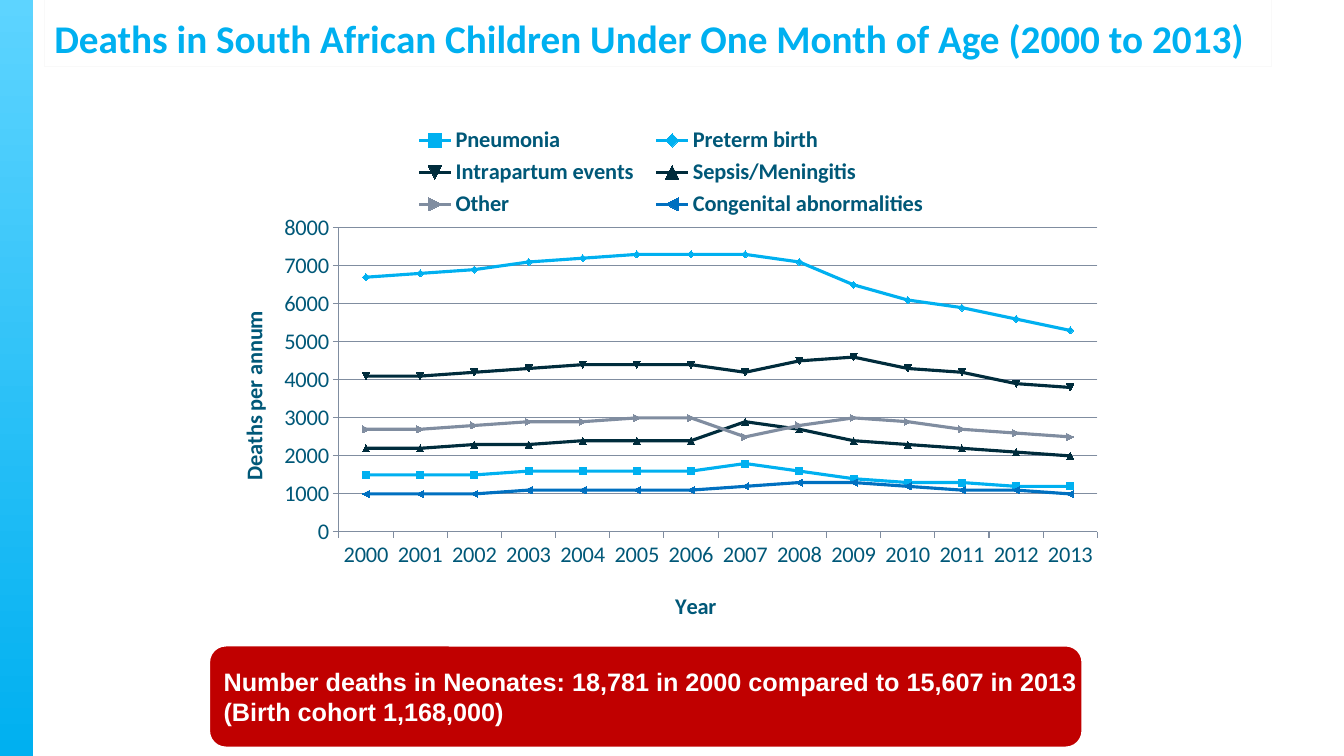
from dataclasses import dataclass

from lxml.etree import SubElement
from pptx import Presentation
from pptx.chart.data import CategoryChartData
from pptx.dml.color import RGBColor
from pptx.enum.chart import XL_CHART_TYPE, XL_LEGEND_POSITION, XL_TICK_MARK
from pptx.enum.shapes import MSO_SHAPE
from pptx.enum.text import MSO_ANCHOR, PP_ALIGN
from pptx.oxml.ns import qn
from pptx.util import Inches, Pt

SKY, TEAL, NAVY, GREY = "00B0F0", "005878", "002C3C", "808DA0"
WHITE, RED, BLUE = "FFFFFF", "C00000", "0070C0"


@dataclass
class Cause:
    name: str
    color: str
    hundreds: list[int]


CAUSES = [
    Cause("Pneumonia", SKY, [15, 15, 15, 16, 16, 16, 16, 18, 16, 14, 13, 13, 12, 12]),
    Cause("Preterm birth", SKY, [67, 68, 69, 71, 72, 73, 73, 73, 71, 65, 61, 59, 56, 53]),
    Cause("Intrapartum events", NAVY, [41, 41, 42, 43, 44, 44, 44, 42, 45, 46, 43, 42, 39, 38]),
    Cause("Sepsis/Meningitis", NAVY, [22, 22, 23, 23, 24, 24, 24, 29, 27, 24, 23, 22, 21, 20]),
    Cause("Other", GREY, [27, 27, 28, 29, 29, 30, 30, 25, 28, 30, 29, 27, 26, 25]),
    Cause("Congenital abnormalities", BLUE, [10, 10, 10, 11, 11, 11, 11, 12, 13, 13, 12, 11, 11, 10]),
]


def rgb(color: str) -> RGBColor:
    return RGBColor.from_string(color)


def set_font(font, size: float, color: str, name: str = "Calibri", bold: bool = False) -> None:
    font.size, font.name, font.bold = Pt(size), name, bold
    font.color.rgb = rgb(color)


def add_box(page, left: float, top: float, width: float, height: float, kind=MSO_SHAPE.RECTANGLE):
    box = page.shapes.add_shape(kind, Inches(left), Inches(top), Inches(width), Inches(height))
    box.shadow.inherit = False
    return box


def paint(box, fill: str, line: str, line_width: float) -> None:
    box.fill.solid()
    box.fill.fore_color.rgb = rgb(fill)
    box.line.color.rgb = rgb(line)
    box.line.width = Pt(line_width)


def write(box, *lines: str, anchor, wrap: bool, **font_format) -> None:
    frame = box.text_frame
    frame.word_wrap = wrap
    frame.vertical_anchor = anchor
    for index, line in enumerate(lines):
        para = frame.paragraphs[0] if index == 0 else frame.add_paragraph()
        para.alignment = PP_ALIGN.LEFT
        span = para.add_run()
        span.text = line
        set_font(span.font, **font_format)


def place(element, **values) -> None:
    """Give a chart part a fixed layout, in fractions of the chart."""
    layout = element.get_or_add_layout() if hasattr(element, "get_or_add_layout") else element.find(qn("c:layout"))
    manual = SubElement(layout, qn("c:manualLayout"))
    for tag, value in values.items():
        SubElement(manual, qn(f"c:{tag}")).set("val", str(value))


def style_axis(axis, title: str, x: float, y: float) -> None:
    axis.major_tick_mark = XL_TICK_MARK.OUTSIDE
    axis.minor_tick_mark = XL_TICK_MARK.NONE
    axis.format.line.color.rgb = rgb(GREY)
    set_font(axis.tick_labels.font, 16, TEAL)
    span = axis.axis_title.text_frame.paragraphs[0].add_run()
    span.text = title
    set_font(span.font, 16, TEAL, bold=True)
    place(axis.axis_title._element, xMode="edge", yMode="edge", x=x, y=y)


def add_deaths_chart(page) -> None:
    data = CategoryChartData()
    data.categories = [str(year) for year in range(2000, 2014)]
    for cause in CAUSES:
        data.add_series(cause.name, [100 * value for value in cause.hundreds])
    chart = page.shapes.add_chart(
        XL_CHART_TYPE.LINE_MARKERS, Inches(2.24), Inches(1.16), Inches(8.83), Inches(5.24), data
    ).chart
    set_font(chart.font, 10, TEAL)
    chart.has_title = False
    plot = chart.plots[0]
    plot.vary_by_categories = False
    for series, cause in zip(plot.series, CAUSES):
        series.smooth = False
        series.format.line.color.rgb = rgb(cause.color)
        series.format.line.width = Pt(2.25)
        series.marker.format.fill.solid()
        series.marker.format.fill.fore_color.rgb = rgb(cause.color)

    # Axes
    style_axis(chart.category_axis, "Year", 0.5, 0.89)
    values = chart.value_axis
    style_axis(values, "Deaths per annum", 0.01, 0.36)
    values.minimum_scale, values.maximum_scale, values.major_unit = 0, 8000, 1000
    values.has_major_gridlines = True
    values.major_gridlines.format.line.color.rgb = rgb(GREY)

    # Plot area and legend
    area = chart._chartSpace.chart.plotArea
    if area.find(qn("c:layout")) is None:
        area.insert(0, area.makeelement(qn("c:layout")))
    place(area, layoutTarget="inner", xMode="edge", yMode="edge", x=0.127, y=0.21, w=0.852, h=0.576)
    chart.has_legend = True
    legend = chart.legend
    legend.position = XL_LEGEND_POSITION.TOP
    legend.include_in_layout = False
    set_font(legend.font, 16, TEAL, bold=True)
    if legend._element.find(qn("c:layout")) is None:
        position = legend._element.find(qn("c:legendPos"))
        position.addnext(position.makeelement(qn("c:layout")))
    place(legend._element, xMode="edge", yMode="edge", x=0.2, y=0.01, w=0.6, h=0.19)


def main() -> None:
    deck = Presentation()
    deck.slide_width, deck.slide_height = Inches(13.33), Inches(7.5)
    page = deck.slides.add_slide(deck.slide_layouts[6])

    # Side band
    band = add_box(page, 0, 0, 0.33, 7.5)
    band.fill.gradient()
    band.fill.gradient_angle = 270
    for stop, color, position in zip(band.fill.gradient_stops, ("5DD4FF", SKY), (0, 1)):
        stop.color.rgb = rgb(color)
        stop.position = position
    band.line.fill.background()

    # Title
    title = add_box(page, 0.44, 0, 12.17, 0.66)
    paint(title, WHITE, "F9F9F9", 0.75)
    write(title, "Deaths in South African Children Under One Month of Age (2000 to 2013)",
          anchor=MSO_ANCHOR.BOTTOM, wrap=True, size=28, color=SKY, bold=True)

    add_deaths_chart(page)

    # Summary
    summary = add_box(page, 2.07, 6.4, 8.67, 1.02, MSO_SHAPE.ROUNDED_RECTANGLE)
    paint(summary, RED, WHITE, 2)
    write(summary, "Number deaths in Neonates: 18,781 in 2000 compared to 15,607 in 2013",
          "(Birth cohort 1,168,000)", anchor=MSO_ANCHOR.MIDDLE, wrap=False,
          size=18, color=WHITE, name="Arial", bold=True)

    deck.save("out.pptx")


if __name__ == "__main__":
    main()
